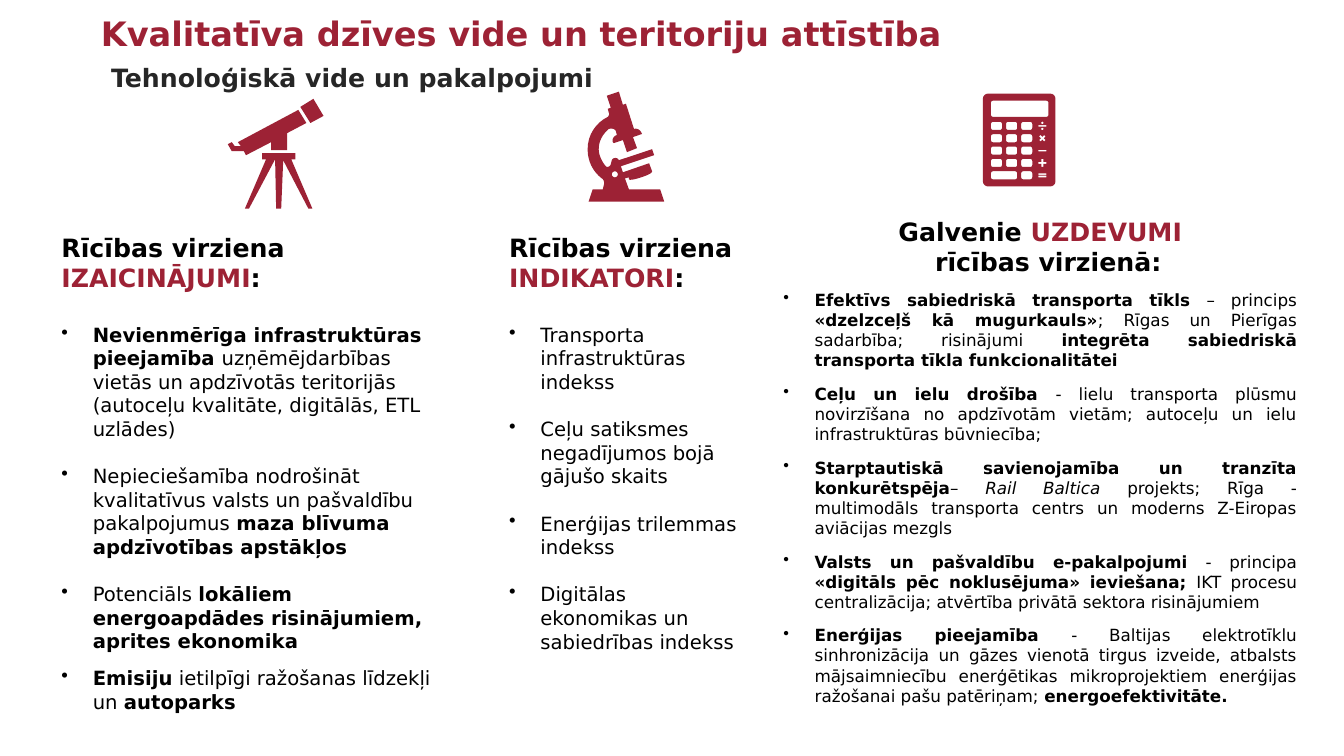
from dataclasses import dataclass
from math import cos, pi, sin

from lxml.etree import SubElement
from pptx import Presentation
from pptx.dml.color import RGBColor
from pptx.enum.text import MSO_AUTO_SIZE as AutoSize, MSO_VERTICAL_ANCHOR as Anchor, PP_ALIGN as Align
from pptx.oxml.ns import qn
from pptx.slide import Slide
from pptx.util import Cm, Pt

FONT = "DejaVu Sans"
RED, BLACK, DARK = "9D2235", "000000", "262626"
UNIT = 0.0254
Point = tuple[float, ...]
Outline = list[Point]


@dataclass
class Span:
    text: str
    bold: bool = False
    italic: bool = False
    color: str = BLACK


@dataclass
class Line:
    spans: list[Span]
    size: float
    before: float = 0
    align: Align = Align.LEFT
    margin: float = 0
    bullet: bool = False


@dataclass
class Block:
    left: float
    top: float
    width: float
    height: float
    lines: list[Line]
    wrap: bool = True


@dataclass
class Icon:
    left: float
    top: float
    outlines: list[Outline]


def rgb(color: str) -> RGBColor:
    return RGBColor.from_string(color)


def strong(text: str, color: str = BLACK) -> Span:
    return Span(text, bold=True, color=color)


def heading(*spans: Span, align: Align = Align.LEFT, margin: float = 0) -> Line:
    return Line(list(spans), 18, align=align, margin=margin)


def challenge(before: float, *spans: Span) -> Line:
    return Line(list(spans), 14, before, margin=0.79, bullet=True)


def task(*spans: Span) -> Line:
    return Line(list(spans), 12, 9.5, Align.JUSTIFY, 0.79, True)


def draw_block(slide: Slide, block: Block) -> None:
    box = slide.shapes.add_textbox(Cm(block.left), Cm(block.top), Cm(block.width), Cm(block.height))
    frame = box.text_frame
    frame.word_wrap = block.wrap
    frame.auto_size = AutoSize.SHAPE_TO_FIT_TEXT
    frame.vertical_anchor = Anchor.TOP
    frame.margin_left = frame.margin_right = frame.margin_top = frame.margin_bottom = Cm(0.13)
    for index, line in enumerate(block.lines):
        paragraph = frame.add_paragraph() if index else frame.paragraphs[0]
        properties = paragraph._p.get_or_add_pPr()
        if line.margin:
            properties.set("marL", str(Cm(line.margin)))
        if line.bullet:
            properties.set("indent", str(-Cm(line.margin)))
            SubElement(properties, qn("a:buChar")).set("char", "•")
        paragraph.alignment = line.align
        paragraph.space_before = Pt(line.before)
        paragraph.font.name = FONT
        paragraph.font.size = Pt(line.size)
        for span in line.spans:
            run = paragraph.add_run()
            run.text = span.text
            run.font.bold = span.bold
            run.font.italic = span.italic
            run.font.color.rgb = rgb(span.color)


def rounded(x: float, y: float, width: float, height: float, radius: float) -> Outline:
    corners = [(x + width - radius, y + height - radius), (x + radius, y + height - radius),
               (x + radius, y + radius), (x + width - radius, y + radius)]
    return [(cx + radius * cos((quarter + step / 4) * pi / 2), cy + radius * sin((quarter + step / 4) * pi / 2))
            for quarter, (cx, cy) in enumerate(corners) for step in range(5)]


def dot(x: float, y: float, radius: float) -> Outline:
    return rounded(x - radius, y - radius, 2 * radius, 2 * radius, radius)


def bar(y: float) -> Outline:
    return [(55, y - 0.8), (63, y - 0.8), (63, y + 0.8), (55, y + 0.8)]


def cross(x: float, y: float, arm: float, half: float, turn: float) -> Outline:
    corner = [(arm, -half), (arm, half), (half, half)]
    angles = [turn + quarter * pi / 2 for quarter in range(4)]
    return [(x + u * cos(a) - v * sin(a), y + u * sin(a) + v * cos(a)) for a in angles for u, v in corner]


def flatten(outline: Outline) -> Outline:
    points = [outline[0]]
    for part in outline[1:]:
        if len(part) == 2:
            points.append(part)
            continue
        x0, y0 = points[-1]
        x1, y1, x2, y2, x3, y3 = part
        for t in (step / 8 for step in range(1, 9)):
            a, b, c, d = (1 - t) ** 3, 3 * t * (1 - t) ** 2, 3 * t * t * (1 - t), t ** 3
            points.append((a * x0 + b * x1 + c * x2 + d * x3, a * y0 + b * y1 + c * y2 + d * y3))
    return points


def draw_icon(slide: Slide, icon: Icon) -> None:
    paths = [[(Cm(x * UNIT), Cm(y * UNIT)) for x, y in flatten(outline)] for outline in icon.outlines]
    builder = slide.shapes.build_freeform(*paths[0][0])
    for index, points in enumerate(paths):
        if index:
            builder.move_to(*points[0])
        builder.add_line_segments(points[1:], close=True)
    shape = builder.convert_to_shape(Cm(icon.left), Cm(icon.top))
    shape.shadow.inherit = False
    shape.fill.solid()
    shape.fill.fore_color.rgb = rgb(RED)
    shape.line.fill.background()


TELESCOPE = [
    [(85, 0), (72, 8), (82, 24), (95, 17)],
    [(70, 11), (10, 43), (13, 47), (7, 47), (4, 43), (0, 45), (4, 52), (16, 52), (18, 56), (43, 43),
     (43, 51), (59, 51), (59, 34), (78, 24)],
    [(34, 54), (34, 60), (38, 60), (17, 109), (21, 109), (47, 60), (48, 109), (53, 109), (55, 61),
     (80, 109), (84, 109), (63, 60), (67, 60), (67, 54)],
]
MICROSCOPE = [
    [(31, 0), (19, 4), (23, 16), (20, 17), (21, 21), (22, 22, 21, 24, 20, 25), (8, 31, 0, 43, 0, 57),
     (0, 69, 5, 79, 14, 86), (16, 87, 17, 90, 16, 93), (15, 97), (5, 97), (1, 109), (76, 109), (72, 97),
     (41, 97), (37, 86), (41, 85), (41, 87), (42, 88, 47, 87, 53, 85), (59, 83, 64, 81, 64, 79), (61, 71),
     (35, 80), (33, 74), (66, 63), (64, 57), (31, 68), (30, 65, 25, 65, 24, 68), (23, 72),
     (22, 75, 19, 75, 18, 74), (14, 69, 11, 63, 11, 57), (11, 49, 15, 42, 21, 37), (24, 36, 27, 37, 28, 39),
     (29, 43), (26, 44, 24, 47, 25, 50), (26, 51), (35, 48), (39, 60), (49, 56), (45, 45), (54, 42), (53, 40),
     (52, 38, 49, 36, 46, 37), (38, 12), (35, 13)],
    dot(27, 82, 3),
]
KEYS = [rounded(8 + 15 * column, 28 + 12.25 * row, 11, 8, 2) for row in range(4) for column in range(3)]
SIGNS = [dot(59, 29, 1.2), bar(32), dot(59, 35, 1.2), cross(59, 44.25, 3.6, 1, pi / 4), bar(56.5),
         cross(59, 68.75, 4, 1, 0), bar(79.8), bar(82.2)]
CALCULATOR = [rounded(0, 0, 72, 92, 5), rounded(8, 7, 57, 16, 2), *KEYS,
              rounded(8, 77, 26, 8, 2), rounded(38, 77, 11, 8, 2), *SIGNS]
ICONS = [Icon(5.74, 2.49, TELESCOPE), Icon(14.81, 2.31, MICROSCOPE), Icon(24.77, 2.36, CALCULATOR)]

TITLE = Block(2.41, 0.2, 21.46, 1.27, [
    Line([strong("Kvalitatīva dzīves vide un teritoriju attīstība", RED)], 24)], wrap=False)
SUBTITLE = Block(2.67, 1.44, 12.6, 1.02, [
    Line([strong("Tehnoloģiskā vide un pakalpojumi", DARK)], 18)], wrap=False)
CHALLENGES = Block(1.42, 5.72, 10.16, 12.5, [
    heading(strong("Rīcības virziena "), strong("IZAICINĀJUMI", RED), strong(":")),
    challenge(21.5, strong("Nevienmērīga infrastruktūras pieejamība "),
              Span("uzņēmējdarbības vietās un apdzīvotās teritorijās (autoceļu kvalitāte, digitālās, ETL uzlādes)")),
    challenge(17, Span("Nepieciešamība nodrošināt kvalitatīvus valsts un pašvaldību pakalpojumus "),
              strong("maza blīvuma apdzīvotības apstākļos")),
    challenge(17, Span("Potenciāls "), strong("lokāliem energoapdādes risinājumiem, aprites ekonomika")),
    challenge(9.5, strong("Emisiju"), Span(" ietilpīgi ražošanas līdzekļi un "), strong("autoparks")),
])
INDICATORS = Block(12.7, 5.72, 6.1, 10.95, [
    heading(strong("Rīcības virziena "), strong("INDIKATORI", RED), strong(":")),
    challenge(21.5, Span("Transporta infrastruktūras indekss")),
    challenge(17, Span("Ceļu satiksmes negadījumos bojā gājušo skaits")),
    challenge(17, Span("Enerģijas trilemmas indekss")),
    challenge(17, Span("Digitālas ekonomikas un sabiedrības indekss")),
])
TASKS = Block(19.61, 5.31, 13.21, 12.75, [
    heading(strong("Galvenie "), strong("UZDEVUMI", RED), align=Align.CENTER),
    heading(strong("rīcības virzienā:"), align=Align.CENTER, margin=0.41),
    task(strong("Efektīvs sabiedriskā transporta tīkls"), Span(" – princips "), strong("«dzelzceļš kā mugurkauls»"),
         Span("; Rīgas un Pierīgas sadarbība; risinājumi "),
         strong("integrēta sabiedriskā transporta tīkla funkcionalitātei")),
    task(strong("Ceļu un ielu drošība "), Span("- lielu transporta plūsmu novirzīšana no apdzīvotām vietām; "
                                               "autoceļu un ielu infrastruktūras būvniecība;")),
    task(strong("Starptautiskā savienojamība un tranzīta konkurētspēja"), Span("– "),
         Span("Rail Baltica ", italic=True),
         Span("projekts; Rīga - multimodāls transporta centrs un moderns Z-Eiropas aviācijas mezgls")),
    task(strong("Valsts un pašvaldību e-pakalpojumi"), Span(" - principa "),
         strong("«digitāls pēc noklusējuma» ieviešana;"),
         Span(" IKT procesu centralizācija; atvērtība privātā sektora risinājumiem")),
    task(strong("Enerģijas pieejamība "),
         Span("- Baltijas elektrotīklu sinhronizācija un gāzes vienotā tirgus izveide, atbalsts mājsaimniecību "
              "enerģētikas mikroprojektiem enerģijas ražošanai pašu patēriņam; "), strong("energoefektivitāte.")),
])


def main() -> None:
    deck = Presentation()
    deck.slide_width, deck.slide_height = Cm(33.87), Cm(19.05)
    slide = deck.slides.add_slide(deck.slide_layouts[6])
    for block in (TITLE, SUBTITLE, CHALLENGES, INDICATORS, TASKS):
        draw_block(slide, block)
    for icon in ICONS:
        draw_icon(slide, icon)
    deck.save("out.pptx")


if __name__ == "__main__":
    main()
